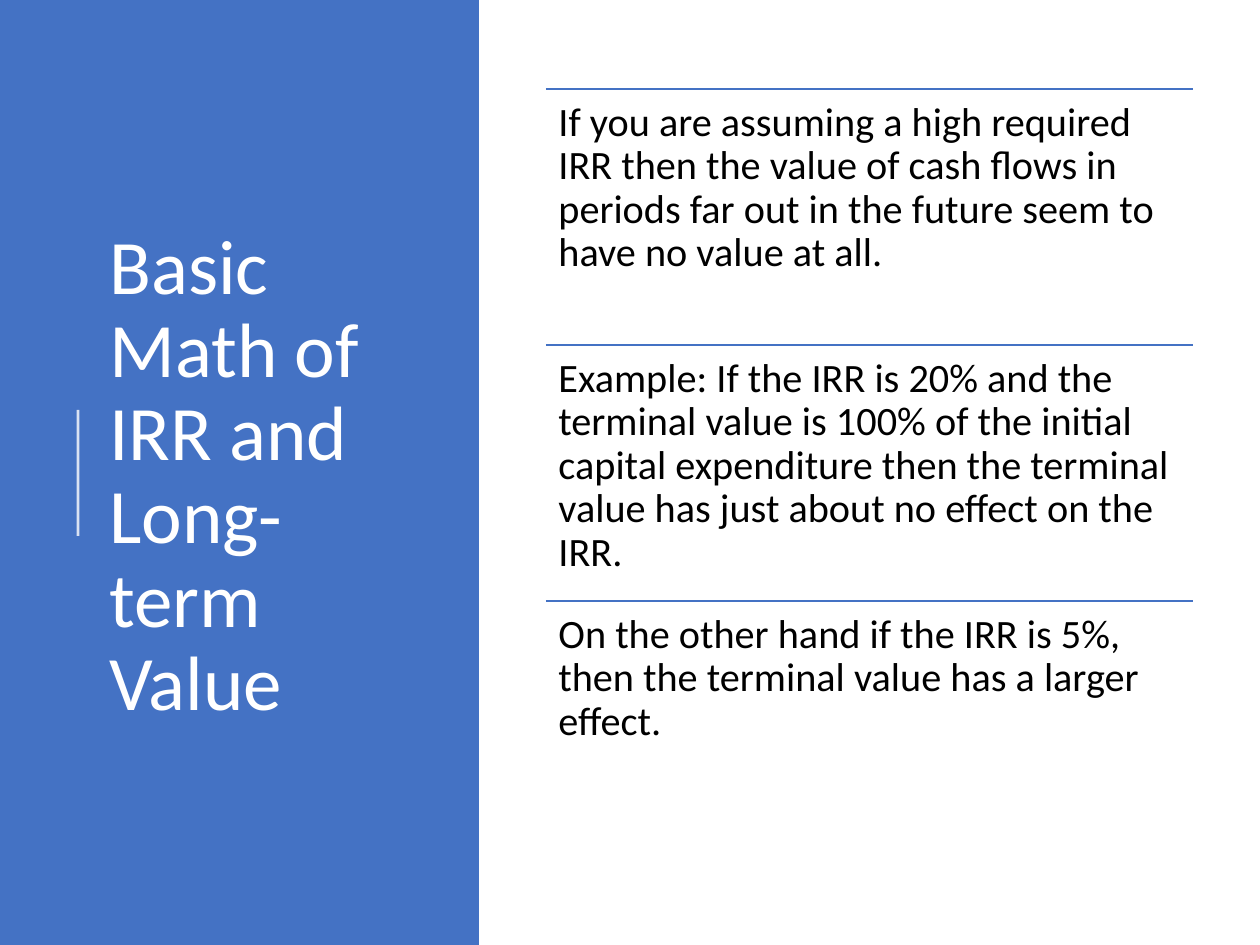
from dataclasses import dataclass

import pptx
import pptx.dml.color
import pptx.enum.shapes
import pptx.enum.text
import pptx.oxml.ns
import pptx.util
from lxml import etree

PIXELS_PER_INCH = 126


@dataclass(frozen=True)
class Theme:
    font: str = "Calibri"
    accent: str = "4472C4"
    light: str = "FFFFFF"
    dark: str = "000000"
    title_size: int = 44
    body_size: int = 23
    rule_width: float = 1
    mark_width: float = 1.5
    mark_opacity: int = 80
    line_spacing: float = 0.9


@dataclass(frozen=True)
class Box:
    left: int
    top: int
    width: int
    height: int

    def emu(self) -> list[int]:
        return [px(value) for value in (self.left, self.top, self.width, self.height)]


@dataclass(frozen=True)
class TextBlock:
    text: str
    box: Box
    size: int
    color: str
    vertical_inset: float
    anchor: pptx.enum.text.MSO_ANCHOR


@dataclass(frozen=True)
class Line:
    start: tuple[int, int]
    end: tuple[int, int]
    color: str
    width: float
    opacity: int = 100


THEME = Theme()
SLIDE = Box(0, 0, 1260, 945)
PANEL = Box(0, 0, 479, 945)
TITLE = TextBlock(
    "Basic Math of IRR and Long-term Value",
    Box(97, 98, 348, 759),
    THEME.title_size,
    THEME.light,
    0.05,
    pptx.enum.text.MSO_ANCHOR.MIDDLE,
)
TITLE_MARK = Line((78, 536), (78, 410), THEME.light, THEME.mark_width, THEME.mark_opacity)
FIRST_POINT = Box(546, 89, 647, 256)
POINTS = (
    "If you are assuming a high required IRR then the value of cash flows in "
    "periods far out in the future seem to have no value at all.",
    "Example: If the IRR is 20% and the terminal value is 100% of the initial "
    "capital expenditure then the terminal value has just about no effect on the IRR.",
    "On the other hand if the IRR is 5%, then the terminal value has a larger effect.",
)


def px(value: int) -> int:
    return round(value * pptx.util.Inches(1) / PIXELS_PER_INCH)


def rgb(color: str) -> pptx.dml.color.RGBColor:
    return pptx.dml.color.RGBColor.from_string(color)


def draw_panel(slide: pptx.slide.Slide, box: Box, color: str) -> None:
    shape = slide.shapes.add_shape(pptx.enum.shapes.MSO_SHAPE.RECTANGLE, *box.emu())
    shape.shadow.inherit = False
    shape.fill.solid()
    shape.fill.fore_color.rgb = rgb(color)
    shape.line.fill.background()


def draw_line(slide: pptx.slide.Slide, line: Line) -> None:
    ends = [px(value) for value in (*line.start, *line.end)]
    connector = slide.shapes.add_connector(pptx.enum.shapes.MSO_CONNECTOR.STRAIGHT, *ends)
    connector.line.color.rgb = rgb(line.color)
    connector.line.width = pptx.util.Pt(line.width)
    qn = pptx.oxml.ns.qn
    properties = connector._element.spPr
    if line.opacity < 100:
        color = properties.find(".//" + qn("a:srgbClr"))
        etree.SubElement(color, qn("a:alpha"), val=str(line.opacity * 1000))
    etree.SubElement(properties, qn("a:effectLst"))


def draw_text(slide: pptx.slide.Slide, block: TextBlock) -> None:
    text_frame = slide.shapes.add_textbox(*block.box.emu()).text_frame
    text_frame.word_wrap = True
    text_frame.vertical_anchor = block.anchor
    text_frame.margin_left = text_frame.margin_right = pptx.util.Inches(0.1)
    text_frame.margin_top = text_frame.margin_bottom = pptx.util.Inches(block.vertical_inset)
    text_frame.text = block.text
    paragraph = text_frame.paragraphs[0]
    paragraph.line_spacing = THEME.line_spacing
    font = paragraph.runs[0].font
    font.name = THEME.font
    font.size = pptx.util.Pt(block.size)
    font.color.rgb = rgb(block.color)


def draw_point(slide: pptx.slide.Slide, text: str, box: Box) -> None:
    right = box.left + box.width
    draw_line(
        slide,
        Line((box.left, box.top), (right, box.top), THEME.accent, THEME.rule_width),
    )
    anchor = pptx.enum.text.MSO_ANCHOR.TOP
    draw_text(slide, TextBlock(text, box, THEME.body_size, THEME.dark, 0.1, anchor))


def main() -> None:
    presentation = pptx.Presentation()
    presentation.slide_width = px(SLIDE.width)
    presentation.slide_height = px(SLIDE.height)
    slide = presentation.slides.add_slide(presentation.slide_layouts[6])
    draw_panel(slide, PANEL, THEME.accent)
    draw_line(slide, TITLE_MARK)
    for index, text in enumerate(POINTS):
        top = FIRST_POINT.top + index * FIRST_POINT.height
        draw_point(slide, text, Box(FIRST_POINT.left, top, FIRST_POINT.width, FIRST_POINT.height))
    draw_text(slide, TITLE)
    presentation.save("out.pptx")


if __name__ == "__main__":
    main()
